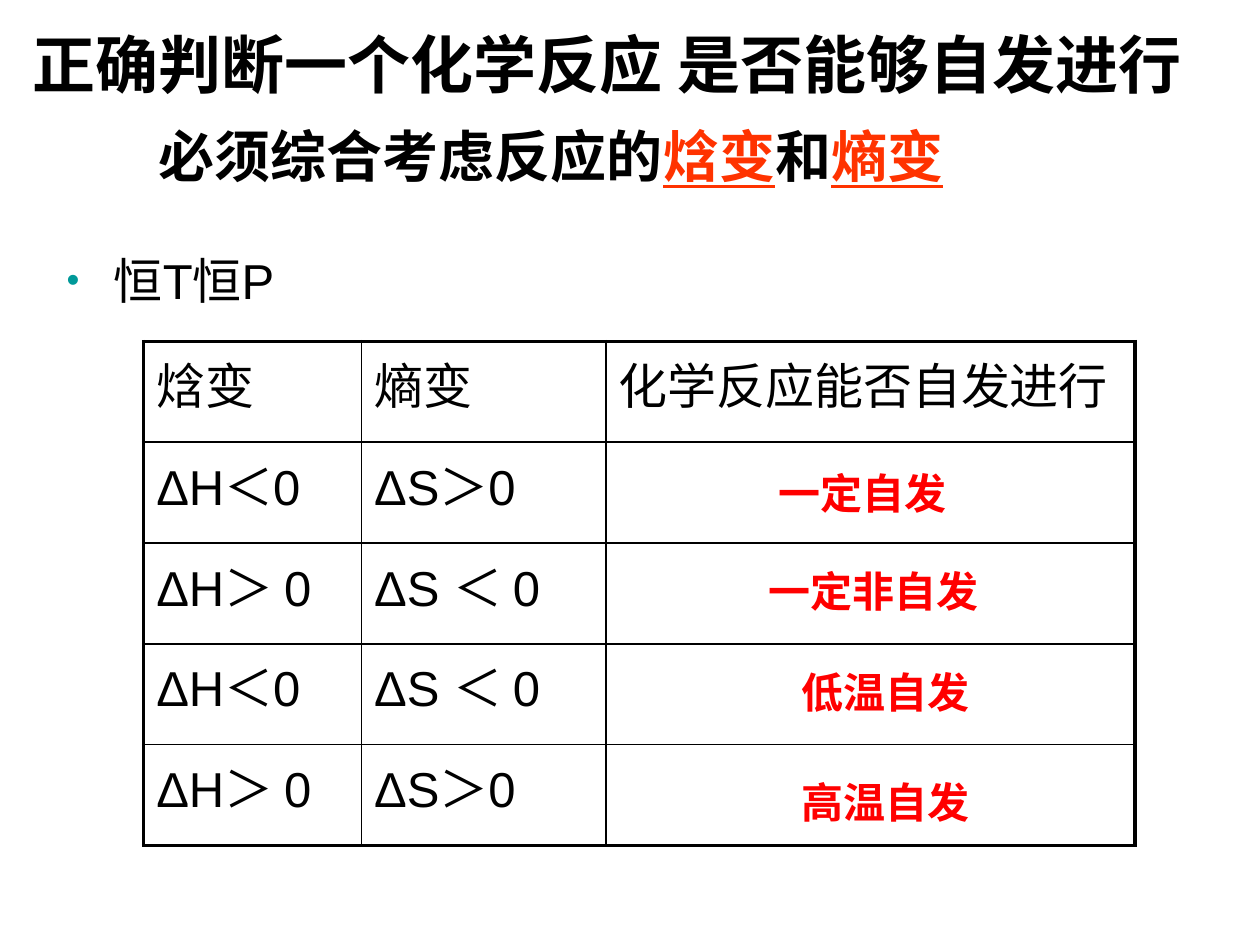
from dataclasses import dataclass

from pptx import Presentation
from pptx.dml.color import RGBColor
from pptx.enum.text import MSO_ANCHOR, PP_ALIGN
from pptx.oxml import parse_xml
from pptx.oxml.ns import nsdecls
from pptx.util import Pt

LEFT = PP_ALIGN.LEFT
TOP = MSO_ANCHOR.TOP
MIDDLE = MSO_ANCHOR.MIDDLE

COLOURS = {
    "text": "000000",
    "accent": "FF3300",
    "answer": "FF0000",
    "bullet": "009999",
}
ASIAN_FONT = "Noto Sans CJK SC"
THIN, THICK = 1, 2.25


@dataclass(frozen=True)
class Answer:
    text: str
    left: float
    top: float
    width: float


ANSWERS = [
    Answer("一定自发", 437.8, 263.5, 111),
    Answer("一定非自发", 432, 319.7, 134.6),
    Answer("低温自发", 450.7, 377.3, 111),
    Answer("高温自发", 450.7, 440, 111),
]
ROWS = [
    ("焓变", "熵变", "化学反应能否自发进行"),
    ("ΔH＜0", "ΔS＞0", ""),
    ("ΔH＞ 0", "ΔS ＜ 0", ""),
    ("ΔH＜0", "ΔS ＜ 0", ""),
    ("ΔH＞ 0", "ΔS＞0", ""),
]
COLUMN_WIDTHS = [124.5, 139.7, 302.4]
ROW_HEIGHT = 57.6


def add_text(para, text: str, *, size: float, colour: str = "text", font: str = "Arial",
             bold: bool = False, underline: bool = False) -> None:
    span = para.add_run()
    span.text = text
    span.font.size = Pt(size)
    span.font.name = font
    span.font.bold = bold
    span.font.underline = underline
    span.font.color.rgb = RGBColor.from_string(COLOURS[colour])
    span._r.get_or_add_rPr().append(
        parse_xml(f'<a:ea {nsdecls("a")} typeface="{ASIAN_FONT}"/>'))


def add_box(page, left: float, top: float, width: float, height: float, wrap: bool = True):
    box = page.shapes.add_textbox(Pt(left), Pt(top), Pt(width), Pt(height))
    box.text_frame.word_wrap = wrap
    return box.text_frame.paragraphs[0]


def add_bullet(para) -> None:
    properties = para._p.get_or_add_pPr()
    properties.set("marL", str(Pt(27)))
    properties.set("indent", str(-Pt(27)))
    for element in (
        f'<a:buClr {nsdecls("a")}><a:srgbClr val="{COLOURS["bullet"]}"/></a:buClr>',
        f'<a:buSzPct {nsdecls("a")} val="75000"/>',
        f'<a:buFont {nsdecls("a")} typeface="Arial"/>',
        f'<a:buChar {nsdecls("a")} char="•"/>',
    ):
        properties.append(parse_xml(element))


def set_borders(cell, widths: dict[str, float]) -> None:
    properties = cell._tc.get_or_add_tcPr()
    for position, (side, width) in enumerate(widths.items()):
        properties.insert(position, parse_xml(
            f'<a:ln{side} {nsdecls("a")} w="{Pt(width)}"><a:solidFill>'
            f'<a:srgbClr val="{COLOURS["text"]}"/></a:solidFill></a:ln{side}>'))


def add_conditions_table(page) -> None:
    last_row, last_column = len(ROWS) - 1, len(COLUMN_WIDTHS) - 1
    table = page.shapes.add_table(
        len(ROWS), len(COLUMN_WIDTHS), Pt(82.1), Pt(195.1),
        Pt(sum(COLUMN_WIDTHS)), Pt(ROW_HEIGHT * len(ROWS))).table
    table.first_row = False
    table.horz_banding = False
    for column, width in zip(table.columns, COLUMN_WIDTHS):
        column.width = Pt(width)
    for row_index, texts in enumerate(ROWS):
        table.rows[row_index].height = Pt(ROW_HEIGHT)
        for column_index, text in enumerate(texts):
            cell = table.cell(row_index, column_index)
            cell.fill.background()
            cell.vertical_anchor = TOP
            set_borders(cell, {
                "L": THICK if column_index == 0 else THIN,
                "R": THICK if column_index == last_column else THIN,
                "T": THICK if row_index == 0 else THIN,
                "B": THICK if row_index == last_row else THIN,
            })
            if text:
                add_text(cell.text_frame.paragraphs[0], text, size=28)


def add_title(page) -> None:
    title = page.shapes.title
    title.left, title.top, title.width, title.height = Pt(11.5), Pt(9.4), Pt(720), Pt(53.3)
    title.text_frame.vertical_anchor = MIDDLE
    title.text_frame.word_wrap = True
    para = title.text_frame.paragraphs[0]
    para.alignment = LEFT
    add_text(para, "正确判断一个化学反应 是否能够自发进行", size=36, font=ASIAN_FONT, bold=True)


def main() -> None:
    deck = Presentation()
    deck.slide_width, deck.slide_height = Pt(720), Pt(540)
    page = deck.slides.add_slide(deck.slide_layouts[5])
    add_title(page)

    subtitle = add_box(page, 83.5, 66.2, 552.2, 45.4)
    for text, marked in (("必须综合考虑反应的", False), ("焓变", True),
                         ("和", False), ("熵变", True)):
        add_text(subtitle, text, size=32, font="Times New Roman", bold=True,
                 colour="accent" if marked else "text", underline=marked)

    condition = add_box(page, 31, 139.7, 330.5, 48)
    add_bullet(condition)
    add_text(condition, "恒T恒P", size=28)

    add_conditions_table(page)
    for answer in ANSWERS:
        para = add_box(page, answer.left, answer.top, answer.width, 36, wrap=False)
        add_text(para, answer.text, size=24, colour="answer", bold=True)

    deck.save("out.pptx")


if __name__ == "__main__":
    main()
